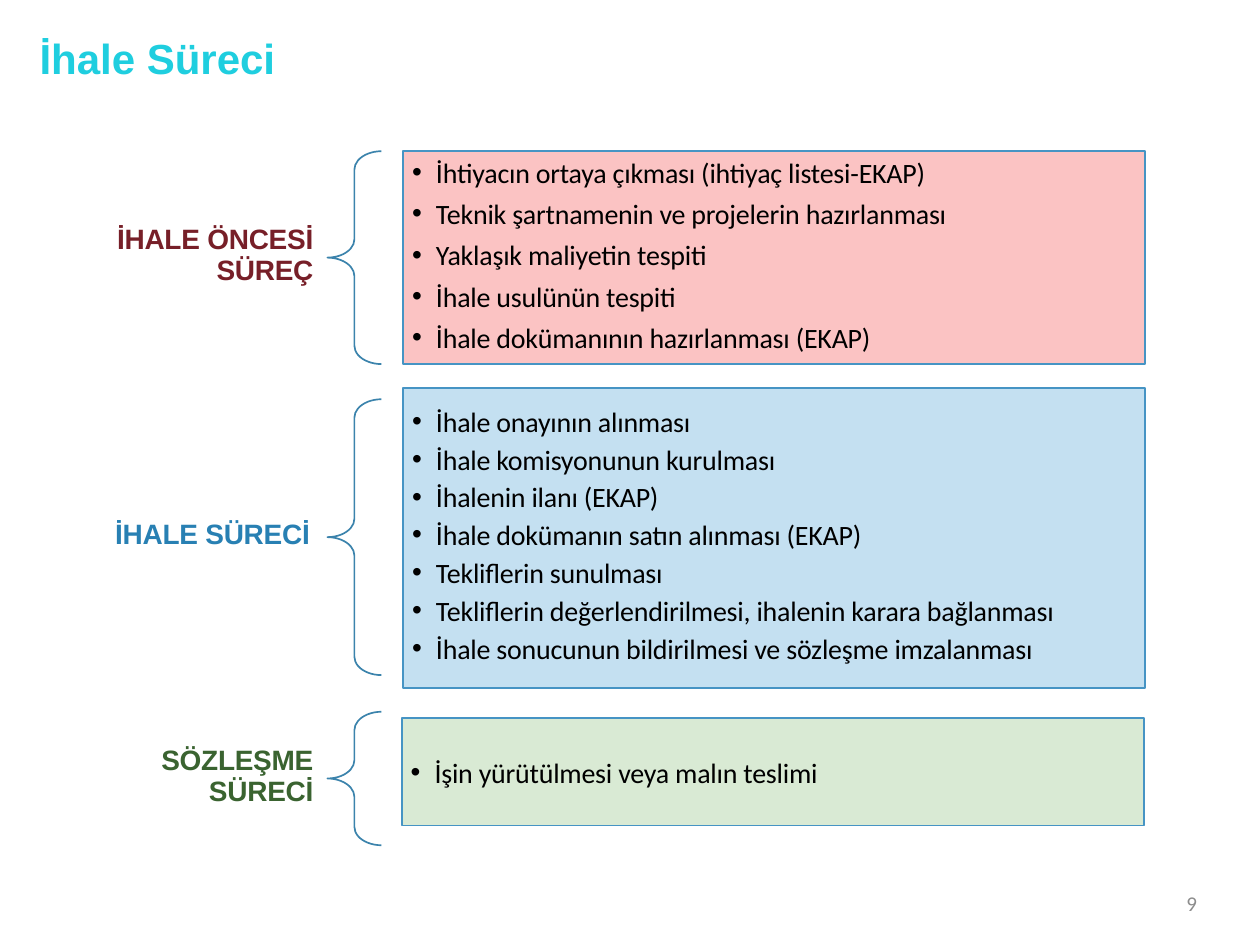
from lxml import etree
from pptx import Presentation
from pptx.dml.color import RGBColor
from pptx.enum.shapes import MSO_SHAPE
from pptx.enum.text import MSO_ANCHOR, PP_ALIGN
from pptx.oxml.ns import qn
from pptx.util import Cm, Pt

RECTANGLE, LEFT_BRACE = MSO_SHAPE.RECTANGLE, MSO_SHAPE.LEFT_BRACE
LEFT, CENTER, RIGHT = PP_ALIGN.LEFT, PP_ALIGN.CENTER, PP_ALIGN.RIGHT
TOP, MIDDLE = MSO_ANCHOR.TOP, MSO_ANCHOR.MIDDLE

TITLE = "İhale Süreci"
PAGE_NUMBER = "9"

# box: left, top, height; brace: top, height (cm)
STAGES = [
    {
        "label": ["İHALE ÖNCESİ", "SÜREÇ"], "label_right": 6.32, "color": "771F28",
        "fill": "FBC3C3", "box": (8.13, 3.05, 4.29), "brace": (3.05, 4.29),
        "anchor": TOP, "inset": 0.08, "gap": 4.4,
        "steps": [
            "İhtiyacın ortaya çıkması (ihtiyaç listesi-EKAP)",
            "Teknik şartnamenin ve projelerin hazırlanması",
            "Yaklaşık maliyetin tespiti",
            "İhale usulünün tespiti",
            "İhale dokümanının hazırlanması (EKAP)",
        ],
    },
    {
        "label": ["İHALE SÜRECİ"], "label_right": 6.25, "color": "2880B3",
        "fill": "C4E0F1", "box": (8.13, 7.82, 6.05), "brace": (8.05, 5.56),
        "anchor": TOP, "inset": 0.33, "gap": 2.4,
        "steps": [
            "İhale onayının alınması",
            "İhale komisyonunun kurulması",
            "İhalenin ilanı (EKAP)",
            "İhale dokümanın satın alınması (EKAP)",
            "Tekliflerin sunulması",
            "Tekliflerin değerlendirilmesi, ihalenin karara bağlanması",
            "İhale sonucunun bildirilmesi ve sözleşme imzalanması",
        ],
    },
    {
        "label": ["SÖZLEŞME", "SÜRECİ"], "label_right": 6.32, "color": "3A6330",
        "fill": "D9EAD4", "box": (8.1, 14.48, 2.16), "brace": (14.35, 2.69),
        "anchor": MIDDLE, "inset": 0, "gap": 0,
        "steps": ["İşin yürütülmesi veya malın teslimi"],
    },
]

BOX_WIDTH = 14.96
BRACE_LEFT, BRACE_WIDTH, BRACE_CURVE = 6.6, 1.09, 0.34
LABEL_WIDTH, LABEL_LINE = 4.3, 0.63
LABEL_RISE = 0.05
BULLET_INDENT, BULLET_HANG = 0.66, 0.48


def rgb(color):
    return RGBColor.from_string(color)


def write(shape, lines, size, font, color, bold=False, align=LEFT, anchor=TOP,
          inset=0, gap=0, leading=None, tracking=-10):
    """Fill a shape with one paragraph per line and return the paragraphs."""
    frame = shape.text_frame
    frame.text = "\n".join(lines)
    frame_format = {"word_wrap": True, "vertical_anchor": anchor, "margin_left": 0,
                    "margin_right": 0, "margin_top": Cm(inset), "margin_bottom": 0}
    for name, value in frame_format.items():
        setattr(frame, name, value)
    for number, paragraph in enumerate(frame.paragraphs):
        paragraph.alignment = align
        paragraph.space_before = Pt(gap if number else 0)
        if leading:
            paragraph.line_spacing = Pt(leading)
        run = paragraph.runs[0]
        for name, value in {"size": Pt(size), "name": font, "bold": bold}.items():
            setattr(run.font, name, value)
        run.font.color.rgb = rgb(color)
        run.font._element.set("spc", str(tracking))
    return frame.paragraphs


def add_bullet(paragraph):
    properties = paragraph._p.get_or_add_pPr()
    properties.set("marL", str(Cm(BULLET_INDENT)))
    properties.set("indent", str(-Cm(BULLET_HANG)))
    etree.SubElement(properties, qn("a:buFont")).set("typeface", "Arial")
    etree.SubElement(properties, qn("a:buChar")).set("char", "•")


def add_outlined(slide, kind, left, top, width, height, line):
    shape = slide.shapes.add_shape(kind, Cm(left), Cm(top), Cm(width), Cm(height))
    shape.shadow.inherit = False
    shape.line.color.rgb = rgb(line)
    shape.line.width = Pt(0.96)
    return shape


def add_stage(slide, stage):
    brace_top, brace_height = stage["brace"]
    brace = add_outlined(slide, LEFT_BRACE, BRACE_LEFT, brace_top,
                         BRACE_WIDTH, brace_height, "3B83AC")
    brace.fill.background()
    brace.adjustments[0] = BRACE_CURVE

    label_height = LABEL_LINE * len(stage["label"]) + 0.06
    label_top = brace_top + (brace_height - label_height) / 2 - LABEL_RISE
    label = slide.shapes.add_textbox(Cm(stage["label_right"] - LABEL_WIDTH), Cm(label_top),
                                     Cm(LABEL_WIDTH), Cm(label_height))
    write(label, stage["label"], 16, "Arial", stage["color"], bold=True,
          align=RIGHT, inset=0.03, leading=17.9)

    left, top, height = stage["box"]
    box = add_outlined(slide, RECTANGLE, left, top, BOX_WIDTH, height, "4694C4")
    box.fill.solid()
    box.fill.fore_color.rgb = rgb(stage["fill"])
    steps = write(box, stage["steps"], 16, "Calibri", "000000",
                  anchor=stage["anchor"], inset=stage["inset"], gap=stage["gap"])
    for step in steps:
        add_bullet(step)


def main():
    deck = Presentation()
    deck.slide_width, deck.slide_height = Cm(25.4), Cm(19.05)
    slide = deck.slides.add_slide(deck.slide_layouts[5])

    title = slide.shapes.title
    title.left, title.top, title.width, title.height = Cm(0.76), Cm(0.61), Cm(4.83), Cm(1.09)
    write(title, [TITLE], 24, "Arial", "1FCEDF", bold=True, align=CENTER,
          anchor=MIDDLE, inset=0.03, tracking=0)
    title.text_frame.word_wrap = False

    for stage in STAGES:
        add_stage(slide, stage)

    page = slide.shapes.add_textbox(Cm(18.21), Cm(17.65), Cm(5.92), Cm(1.02))
    write(page, [PAGE_NUMBER], 12, "Calibri", "8C8C8C", align=RIGHT,
          anchor=MIDDLE, leading=16.5, tracking=0)

    deck.save("out.pptx")


if __name__ == "__main__":
    main()
